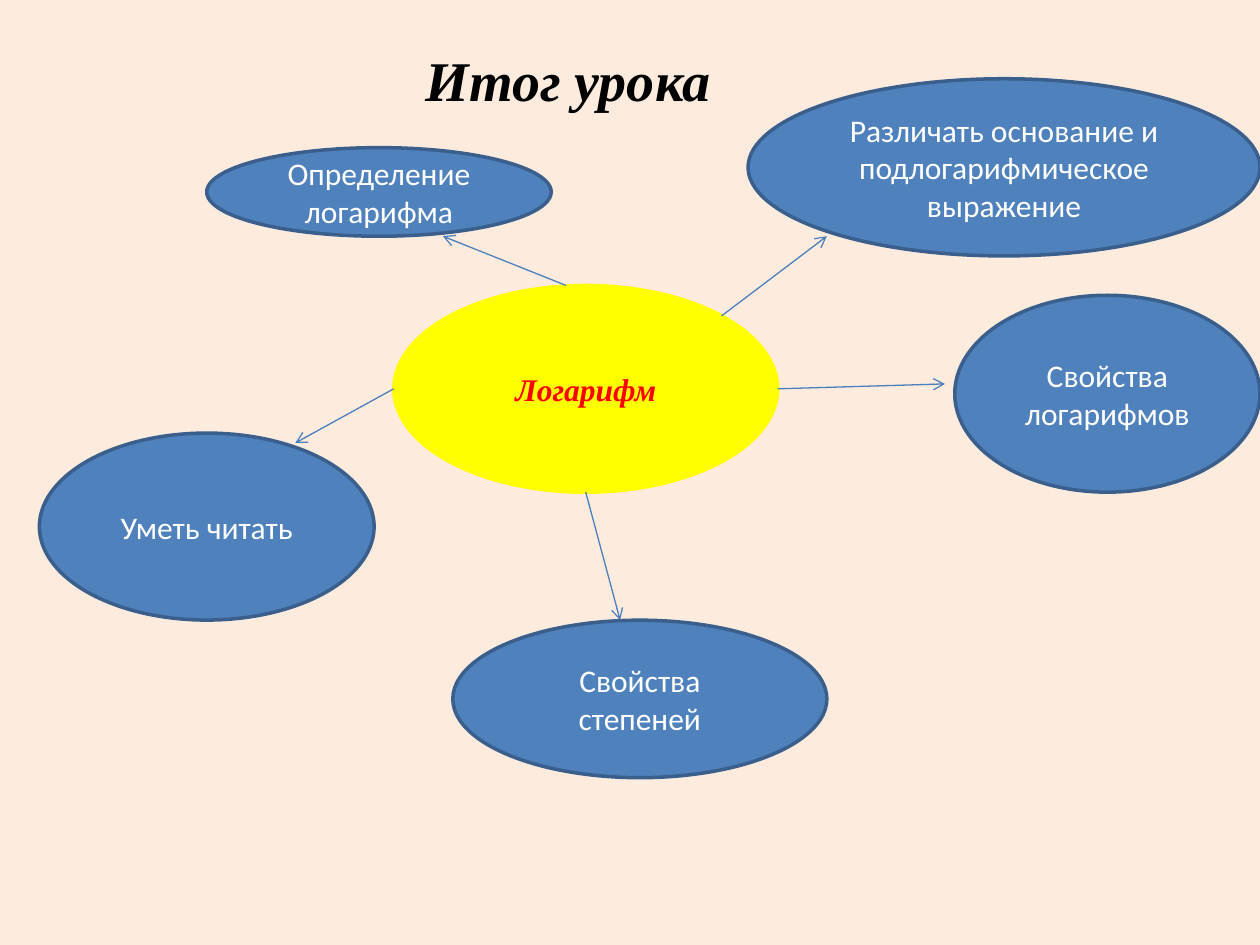
from pptx import Presentation, util as u
from pptx.dml.color import RGBColor
from pptx.enum import shapes, text
from pptx.oxml.ns import qn
from lxml import etree

COLORS = {
    "background": "FDECDE", "blue": "4F81BD", "border": "3A5F8C",
    "arrow": "4B7EBC", "yellow": "FFFF00", "red": "FF0000",
    "white": "FFFFFF", "black": "000000",
}
COLS, ROWS = 128, 96
WIDTH, HEIGHT = u.Inches(10), u.Inches(7.5)

# Topics: text, (column, row, columns, rows)
TOPICS = [
    ("Определение логарифма", (21, 15, 35, 9)),
    ("Свойства логарифмов", (97, 30, 31, 20)),
    ("Свойства степеней", (46, 63, 38, 16)),
    ("Уметь читать", (4, 44, 34, 19)),
    ("Различать основание и подлогарифмическое выражение", (76, 8, 52, 18)),
]
CENTER = (40, 29, 39, 21)

# Arrows: start and end as (column, row)
ARROWS = [
    ((79, 39.5), (96, 39)),
    ((57.5, 29), (45, 24)),
    ((40, 39.5), (30, 45)),
    ((59.5, 50), (63, 63)),
    ((73.3, 32.1), (84, 24)),
]


def color(name):
    return RGBColor.from_string(COLORS[name])


def grid(*cells):
    """Turn alternating column and row counts into lengths."""
    steps = (WIDTH / COLS, HEIGHT / ROWS)
    return [u.Emu(round(c * steps[i % 2])) for i, c in enumerate(cells)]


def write(tf, words, font="Calibri", size=18, ink="white", strong=False,
          align=text.PP_ALIGN.CENTER):
    p = tf.paragraphs[0]
    p.alignment = align
    r = p.add_run()
    r.text = words
    r.font.name, r.font.size = font, u.Pt(size)
    r.font.bold = r.font.italic = strong
    r.font.color.rgb = color(ink)


def add_title(s, words, box):
    tf = s.shapes.add_textbox(*grid(*box)).text_frame
    tf.word_wrap = False
    tf.auto_size = text.MSO_AUTO_SIZE.SHAPE_TO_FIT_TEXT
    write(tf, words, font="Times New Roman", size=32, ink="black",
          strong=True, align=text.PP_ALIGN.LEFT)


def add_oval(s, words, box, fill="blue", border="border", **style):
    sp = s.shapes.add_shape(shapes.MSO_SHAPE.OVAL, *grid(*box))
    sp.shadow.inherit = False
    sp.fill.solid()
    sp.fill.fore_color.rgb = color(fill)
    sp.line.color.rgb = color(border)
    sp.line.width = u.Pt(2)
    tf = sp.text_frame
    tf.word_wrap = True
    tf.vertical_anchor = text.MSO_ANCHOR.MIDDLE
    write(tf, words, **style)


def add_arrow(s, start, end):
    line = s.shapes.add_connector(shapes.MSO_CONNECTOR.STRAIGHT, *grid(*start, *end))
    line.line.color.rgb = color("arrow")
    line.line.width = u.Pt(0.75)
    etree.SubElement(line.line._get_or_add_ln(), qn("a:tailEnd"), type="arrow")
    etree.SubElement(line._element.spPr, qn("a:effectLst"))


def main():
    prs = Presentation()
    prs.slide_width, prs.slide_height = WIDTH, HEIGHT
    s = prs.slides.add_slide(prs.slide_layouts[6])
    s.background.fill.solid()
    s.background.fill.fore_color.rgb = color("background")

    add_title(s, "Итог урока", (42, 4, 31.75, 8.2))
    # Central idea, then the topics around it
    add_oval(s, "Логарифм", CENTER, fill="yellow", border="yellow",
             font="Times New Roman", ink="red", strong=True)
    for start, end in ARROWS:
        add_arrow(s, start, end)
    for words, box in TOPICS:
        add_oval(s, words, box)

    prs.save("out.pptx")


if __name__ == "__main__":
    main()
